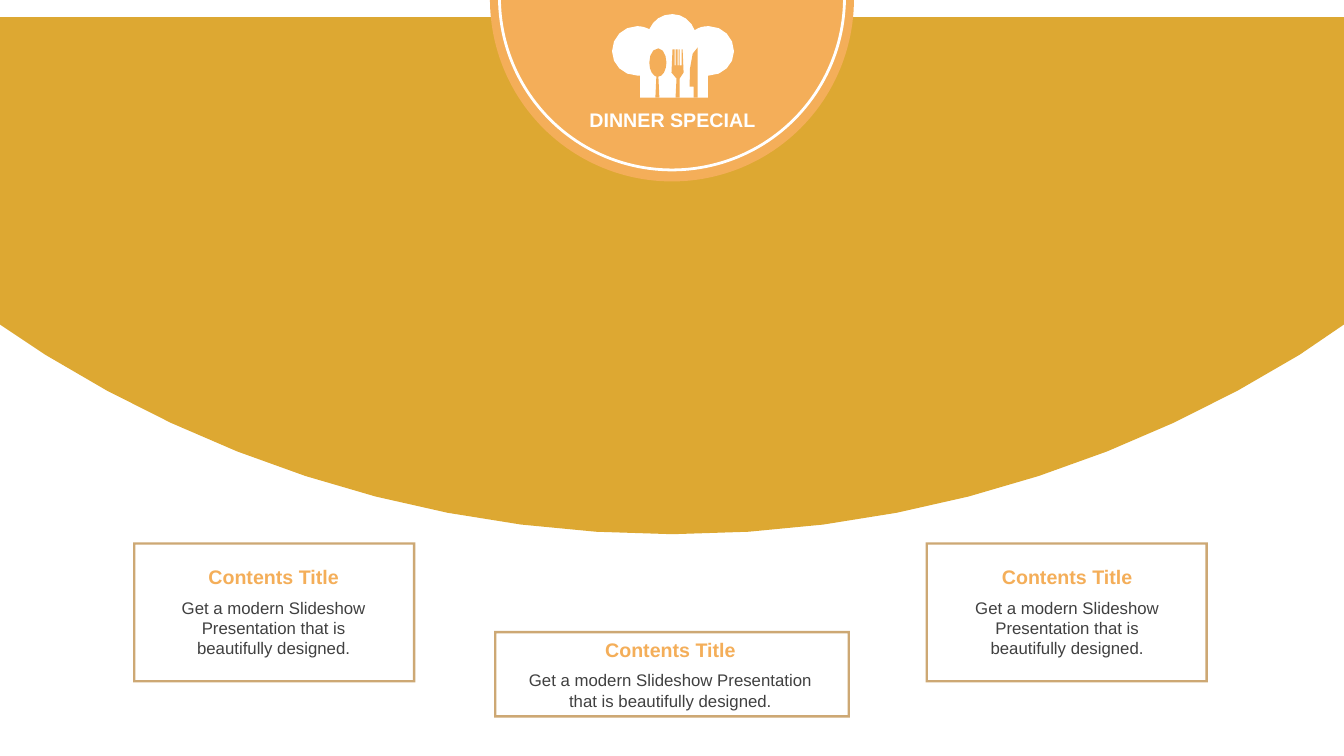
from pptx import Presentation
from pptx import util as u
from pptx.dml import color
from pptx.enum import shapes, text

IN = u.Inches
GOLD, PEACH, TAN, WHITE, GREY = "DDA832", "F4AE59", "CDA874", "FFFFFF", "404040"


def hue(fill, code):
    fill.solid()
    fill.fore_color.rgb = color.RGBColor.from_string(code)


def draw(rings, code, cuts):
    pen = None
    for ring in rings:
        dots = [ring[0]]
        for step in ring[1:]:
            if len(step) == 2:
                dots.append(step)
                continue
            knots = [dots[-1], step[:2], step[2:4], step[4:]]
            for n in range(1, cuts + 1):
                t = n / cuts
                mix = ((1 - t) ** 3, 3 * t * (1 - t) ** 2, 3 * t * t * (1 - t), t ** 3)
                dots.append(tuple(sum(m * k[a] for m, k in zip(mix, knots)) for a in (0, 1)))
        dots = [(IN(x), IN(y)) for x, y in dots]
        if pen is None:
            pen = page.shapes.build_freeform(*dots[0], scale=1)
        else:
            pen.move_to(*dots[0])
        pen.add_line_segments(dots[1:], close=True)
    form = pen.convert_to_shape()
    form.shadow.inherit = False
    form.line.fill.background()
    hue(form.fill, code)


deck = Presentation()
deck.slide_width, deck.slide_height = IN(13.33), IN(7.5)
page = deck.slides.add_slide(deck.slide_layouts[5])

dome = [(0, 0.17), (13.33, 0.17), (13.33, 3.22), (12.89, 3.52),
        (11.08, 4.64, 8.95, 5.3, 6.67, 5.3), (4.38, 5.3, 2.25, 4.64, 0.45, 3.52), (0, 3.22)]
draw([dome], GOLD, 9)

kind = shapes.MSO_SHAPE
ring, edge = 2 / 72, 1.7 / 72
parts = [
    (kind.CHORD, (4.86, -1.81, 3.61, 3.61), (215.79, 107.97), PEACH),
    (kind.BLOCK_ARC, (4.94, -1.75, 3.45, 3.45), (0.38, 107.7, ring / 3.45), WHITE),
    (kind.FRAME, (1.32, 5.38, 2.8, 1.39), (edge / 1.39,), TAN),
    (kind.FRAME, (9.18, 5.38, 2.8, 1.39), (edge / 1.39,), TAN),
    (kind.FRAME, (4.9, 6.26, 3.53, 0.86), (edge / 0.86,), TAN),
]
for sort, place, bends, code in parts:
    part = page.shapes.add_shape(sort, *map(IN, place))
    for n, bend in enumerate(bends):
        part.adjustments[n] = bend
    part.shadow.inherit = False
    part.line.fill.background()
    hue(part.fill, code)

hat = [(6.67, 0.14), (6.77, 0.14, 6.86, 0.21, 6.89, 0.3), (6.93, 0.27, 6.98, 0.26, 7.03, 0.26),
       (7.17, 0.26, 7.28, 0.37, 7.28, 0.51), (7.28, 0.64, 7.17, 0.75, 7.03, 0.75),
       (7.02, 0.75), (7.02, 0.97), (6.35, 0.97), (6.35, 0.75), (6.32, 0.75),
       (6.18, 0.75, 6.07, 0.64, 6.07, 0.51), (6.07, 0.37, 6.18, 0.26, 6.32, 0.26),
       (6.36, 0.26, 6.4, 0.27, 6.44, 0.29), (6.48, 0.2, 6.56, 0.14, 6.67, 0.14)]
draw([hat], WHITE, 4)

spoon = [(6.53, 0.48), (6.58, 0.48, 6.61, 0.56, 6.61, 0.62), (6.61, 0.67, 6.59, 0.73, 6.56, 0.75),
         (6.53, 0.76), (6.54, 0.97), (6.5, 0.97), (6.51, 0.76), (6.49, 0.75),
         (6.46, 0.73, 6.44, 0.68, 6.44, 0.62), (6.44, 0.55, 6.47, 0.48, 6.53, 0.48)]
fork = [(6.67, 0.49)]
for left, right in ((6.69, 6.7), (6.72, 6.73), (6.74, 6.76)):
    fork += [(left, 0.49), (left, 0.65), (right, 0.65), (right, 0.49)]
fork += [(6.77, 0.49), (6.78, 0.72), (6.74, 0.78), (6.74, 0.97),
         (6.7, 0.97), (6.71, 0.78), (6.66, 0.72)]
knife = [(6.92, 0.47), (6.92, 0.97), (6.88, 0.97), (6.88, 0.86), (6.84, 0.86),
         (6.83, 0.69, 6.86, 0.47, 6.92, 0.47)]
draw([spoon, fork, knife], PEACH, 3)

head = {"size": u.Pt(14), "bold": True, "name": "Arial"}
body = {"size": u.Pt(12), "bold": False, "name": "Arial"}
blurb = "Get a modern Slideshow Presentation that is beautifully designed."
name = page.shapes.title
name.element.getparent().append(name.element)
notes = [(name, "DINNER SPECIAL", (5.63, 1.02, 2.08, 0.34), head, WHITE)]
for left, top, wide, high in ((1.58, 5.56, 2.27, 0.71), (5.03, 6.28, 3.24, 0.5), (9.45, 5.56, 2.27, 0.71)):
    notes += [(None, blurb, (left, top + 0.32, wide, high), body, GREY),
              (None, "Contents Title", (left, top, wide, 0.34), head, PEACH)]
for box, words, place, look, code in notes:
    box = box or page.shapes.add_textbox(0, 0, 0, 0)
    for key, size in zip(("left", "top", "width", "height"), place):
        setattr(box, key, IN(size))
    frame = box.text_frame
    frame.text = words
    frame.word_wrap = True
    frame.auto_size = text.MSO_AUTO_SIZE.SHAPE_TO_FIT_TEXT
    line = frame.paragraphs[0]
    line.alignment = text.PP_ALIGN.CENTER
    font = line.runs[0].font
    for key, value in look.items():
        setattr(font, key, value)
    hue(font.fill, code)

deck.save("out.pptx")
